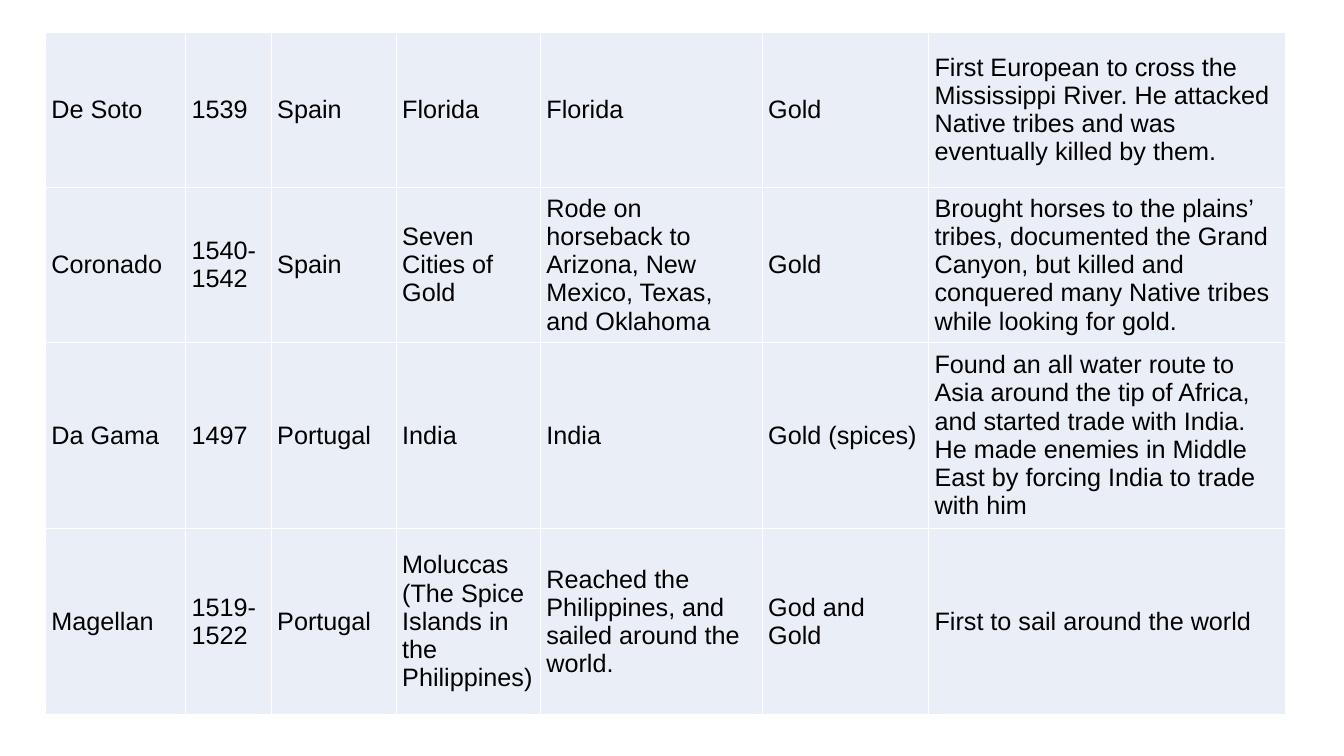
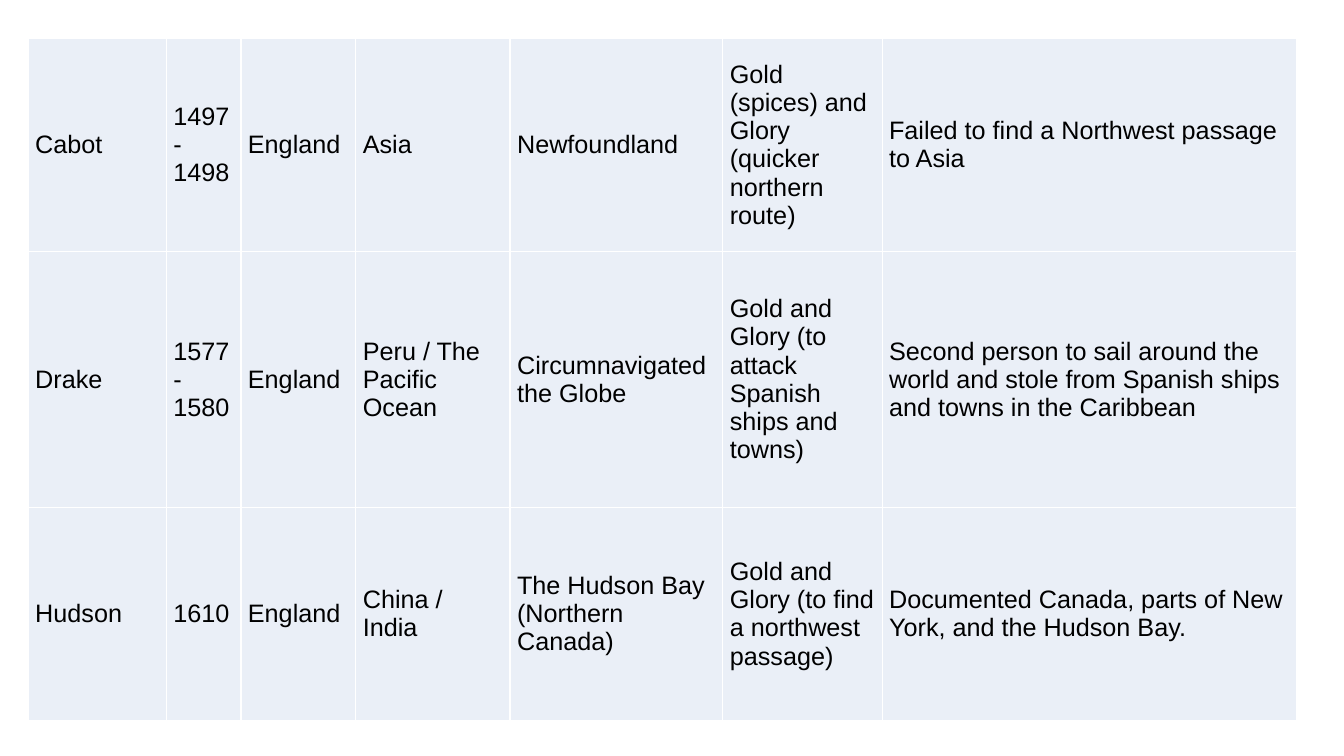
from lxml import etree
from pptx import Presentation
from pptx.dml.color import RGBColor
from pptx.enum.text import MSO_ANCHOR
from pptx.oxml.ns import qn
from pptx.util import Inches, Pt

MIDDLE = MSO_ANCHOR.MIDDLE
BLACK = RGBColor(0x00, 0x00, 0x00)
WHITE = RGBColor(0xFF, 0xFF, 0xFF)
PALE_BLUE = RGBColor(0xEA, 0xEF, 0xF7)
FONT = "Arial"
TABLE_HEIGHT = 6.77
BORDER_SIDES = ("a:lnL", "a:lnR", "a:lnT", "a:lnB")

# Column widths are in inches; row shares divide the common table height.
# Cells: explorer, years, sponsor, destination, places reached, motive, impact.
TABLES = [
    {
        "left": 0.45,
        "top": 0.32,
        "side_margin": 0.06,
        "columns": [1.39, 0.85, 1.24, 1.43, 2.2, 1.65, 3.54],
        "row_shares": [5, 5, 6, 6],
        "rows": [
            ["De Soto", "1539", "Spain", "Florida", "Florida", "Gold",
             "First European to cross the Mississippi River. He attacked "
             "Native tribes and was eventually killed by them."],
            ["Coronado", "1540- 1542", "Spain", "Seven Cities of Gold",
             "Rode on horseback to Arizona, New Mexico, Texas, and Oklahoma",
             "Gold",
             "Brought horses to the plains’ tribes, documented the Grand "
             "Canyon, but killed and conquered many Native tribes while "
             "looking for gold."],
            ["Da Gama", "1497", "Portugal", "India", "India", "Gold (spices)",
             "Found an all water route to Asia around the tip of Africa, and "
             "started trade with India. He made enemies in Middle East by "
             "forcing India to trade with him"],
            ["Magellan", "1519- 1522", "Portugal",
             "Moluccas (The Spice Islands in the Philippines)",
             "Reached the Philippines, and sailed around the world.",
             "God and Gold", "First to sail around the world"],
        ],
    },
    {
        "left": 0.28,
        "top": 0.38,
        "side_margin": 0.07,
        "columns": [1.37, 0.74, 1.14, 1.53, 2.11, 1.58, 4.11],
        "row_shares": [5, 6, 5],
        "rows": [
            ["Cabot", "1497- 1498", "England", "Asia", "Newfoundland",
             "Gold (spices) and Glory (quicker northern route)",
             "Failed to find a Northwest passage to Asia"],
            ["Drake", "1577- 1580", "England", "Peru / The Pacific Ocean",
             "Circumnavigated the Globe",
             "Gold and Glory (to attack Spanish ships and towns)",
             "Second person to sail around the world and stole from Spanish "
             "ships and towns in the Caribbean"],
            ["Hudson", "1610", "England", "China / India",
             "The Hudson Bay (Northern Canada)",
             "Gold and Glory (to find a northwest passage)",
             "Documented Canada, parts of New York, and the Hudson Bay."],
        ],
    },
]


def style_cell(cell, text, side_margin):
    cell.text = text
    cell.vertical_anchor = MIDDLE
    cell.margin_left = cell.margin_right = Inches(side_margin)
    cell.margin_top = cell.margin_bottom = 0

    para = cell.text_frame.paragraphs[0]
    para.space_after = Pt(12)
    para.font.name = FONT
    para.font.size = Pt(18)
    para.font.color.rgb = BLACK

    # Borders must come before the fill in the cell properties.
    properties = cell._tc.get_or_add_tcPr()
    for side in BORDER_SIDES:
        border = etree.SubElement(properties, qn(side), w=str(Pt(1)))
        fill = etree.SubElement(border, qn("a:solidFill"))
        etree.SubElement(fill, qn("a:srgbClr"), val=str(WHITE))
    cell.fill.solid()
    cell.fill.fore_color.rgb = PALE_BLUE


deck = Presentation()
deck.slide_width = Inches(13.33)
deck.slide_height = Inches(7.5)
blank_layout = deck.slide_layouts[6]

for content in TABLES:
    page = deck.slides.add_slide(blank_layout)
    columns, shares = content["columns"], content["row_shares"]
    table = page.shapes.add_table(
        len(shares), len(columns),
        Inches(content["left"]), Inches(content["top"]),
        Inches(sum(columns)), Inches(TABLE_HEIGHT),
    ).table
    table.first_row = False
    table.horz_banding = False

    for column, width in zip(table.columns, columns):
        column.width = Inches(width)
    for row, share, texts in zip(table.rows, shares, content["rows"]):
        row.height = Inches(TABLE_HEIGHT * share / sum(shares))
        for cell, text in zip(row.cells, texts):
            style_cell(cell, text, content["side_margin"])

deck.save("out.pptx")
